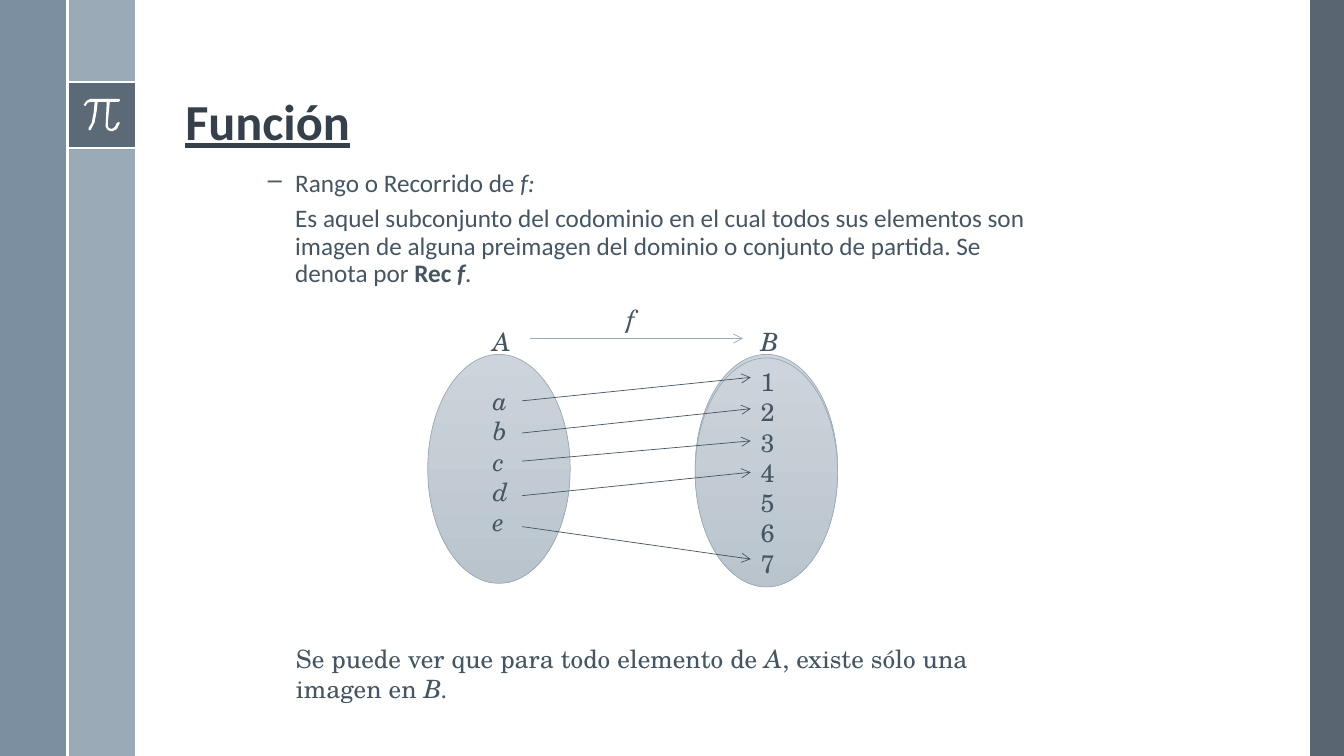
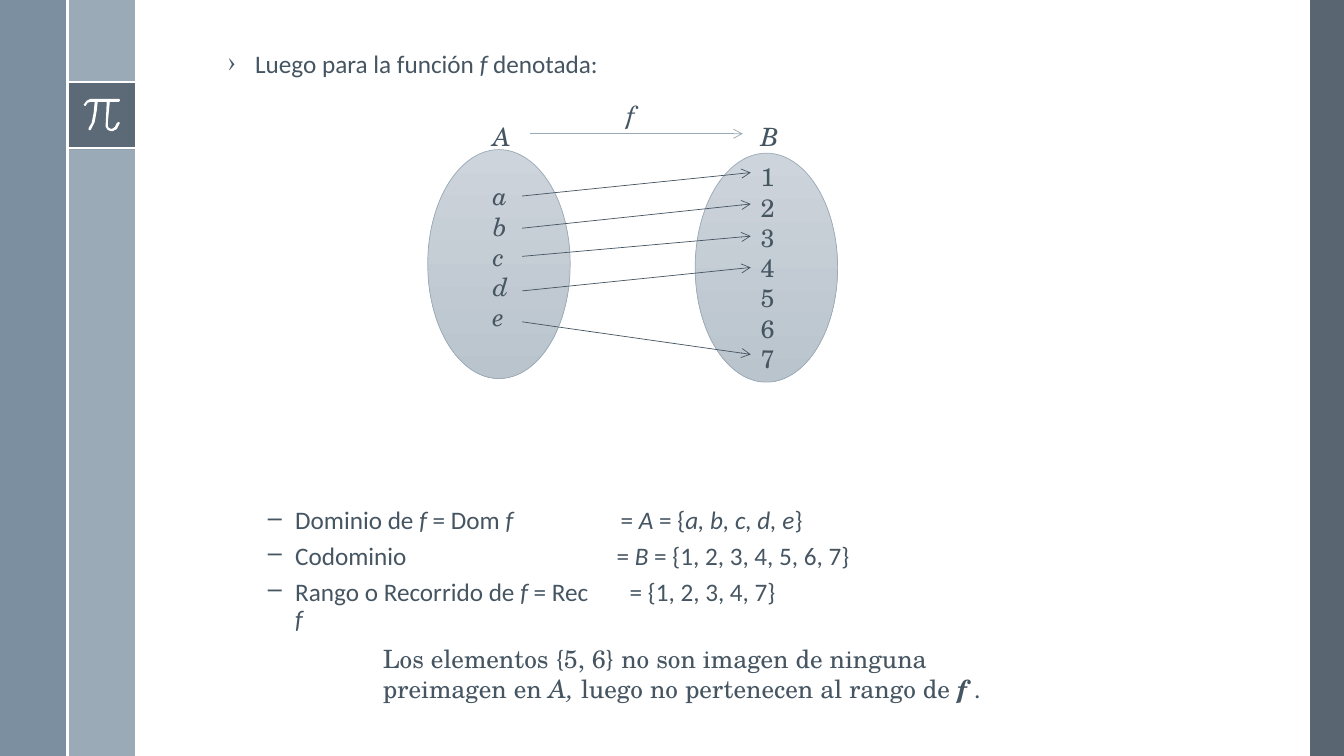
from lxml.etree import SubElement as Sub
from pptx import Presentation
from pptx.dml.color import RGBColor as Rgb
from pptx.enum.shapes import MSO_CONNECTOR as Link, MSO_SHAPE as Form
from pptx.enum.text import MSO_ANCHOR as Anchor
from pptx.oxml.ns import qn
from pptx.util import Cm, Pt

HUES = {
    "text": "465562",
    "title": "35404A",
    "dark": "475562",
    "mid": "6A8093",
    "pale": "9BAAB7",
    "light": "CDD4DB",
    "shade": "BAC4CD",
    "white": "FFFFFF",
}
SANS = {"name": "Calibri", "size": Pt(18)}
SERIF = {"name": "TeX Gyre Schola", "size": Pt(18)}
HEAD = {"name": "Calibri", "size": Pt(36), "bold": True, "underline": True}
STYLES = {
    "": {},
    "i": {"italic": True},
    "b": {"bold": True},
    "bi": {"bold": True, "italic": True},
}
FIRST = {"left": 0.69, "hang": -0.69, "mark": "›"}
SECOND = {"left": 1.7, "hang": -0.69, "mark": "–"}
PLAIN = {"left": 1.7}
DENSE = {"line_spacing": 0.9, "space_before": Pt(6)}
BANDS = [
    (33.02, 0, 0.85, 19.05, "dark", 90),
    (1.7, 0, 1.7, 19.05, "pale", 100),
    (0, 0, 1.7, 19.05, "mid", 88),
    (1.7, 2.06, 1.7, 1.7, "dark", 75),
]
RULES = [(1.7, 2.06, 3.4, 2.06), (1.7, 3.73, 3.4, 3.73), (1.7, 0, 1.7, 19.05)]
PI = [
    (118, 98), (90, 98), (86, 100), (83, 104), (84, 105), (85, 105),
    (87, 102), (90, 101), (94, 101), (93, 112), (91, 122), (88, 127),
    (88, 129), (90, 129), (94, 121), (96, 110), (97, 101), (106, 101),
    (105, 122), (105, 126), (107, 129), (110, 130), (112, 130), (116, 128),
    (119, 122), (118, 121), (116, 122), (114, 126), (111, 128), (108, 127),
    (107, 125), (107, 122), (109, 101), (118, 101), (119, 100), (119, 99),
]
OVAL_B = 17.52
COL_A, COL_B = 12.17, 18.92
PAIRS = [(1.17, 0.58), (1.98, 1.37), (2.69, 2.18), (3.56, 2.97), (4.34, 5.16)]


def hue(key):
    return Rgb.from_string(HUES[key])


def fmt(item, vals):
    for key, val in vals.items():
        setattr(item, key, val)


def band(slide, x, y, w, h, tone, alpha):
    box = slide.shapes.add_shape(Form.RECTANGLE, Cm(x), Cm(y), Cm(w), Cm(h))
    box.shadow.inherit = False
    box.fill.solid()
    box.fill.fore_color.rgb = hue(tone)
    box.line.fill.background()
    if alpha < 100:
        paint = box.element.spPr.find(qn("a:solidFill"))[0]
        Sub(paint, qn("a:alpha"), val=str(alpha * 1000))


def line(slide, ends, tone, width=0.5, arrow=True):
    link = slide.shapes.add_connector(Link.STRAIGHT, *map(Cm, ends))
    link.line.color.rgb = hue(tone)
    link.line.width = Pt(width)
    props = link.element.spPr
    if arrow:
        Sub(props.find(qn("a:ln")), qn("a:tailEnd"), type="arrow")
    Sub(props, qn("a:effectLst"))


def sign(slide):
    pen = slide.shapes.build_freeform(*PI[0], scale=Cm(0.0254))
    pen.add_line_segments(PI[1:], close=True)
    glyph = pen.convert_to_shape()
    glyph.shadow.inherit = False
    glyph.fill.solid()
    glyph.fill.fore_color.rgb = hue("white")
    glyph.line.fill.background()


def oval(slide, x, y):
    ring = slide.shapes.add_shape(Form.OVAL, Cm(x), Cm(y), Cm(3.59), Cm(5.77))
    ring.shadow.inherit = False
    ring.fill.gradient()
    ring.fill.gradient_angle = 270
    for stop, tone in zip(ring.fill.gradient_stops, ("light", "shade")):
        stop.color.rgb = hue(tone)
    ring.line.color.rgb = hue("pale")
    ring.line.width = Pt(0.5)


def indent(para, left=0, hang=0, mark=None):
    props = para._p.get_or_add_pPr()
    props.set("marL", str(Cm(left)))
    props.set("indent", str(Cm(hang)))
    if mark:
        Sub(props, qn("a:buChar"), char=mark)


def text(slide, area, paras, font, tone="text", dents=(), space=None, anchor=Anchor.TOP):
    frame = slide.shapes.add_textbox(*map(Cm, area)).text_frame
    frame.word_wrap = True
    frame.vertical_anchor = anchor
    for num, parts in enumerate(paras):
        para = frame.add_paragraph() if num else frame.paragraphs[0]
        fmt(para, space or {})
        if dents:
            indent(para, **dents[num])
        for words, style in parts:
            run = para.add_run()
            run.text = words
            fmt(run.font, font | STYLES[style])
            run.font.color.rgb = hue(tone)


def column(slide, x, y, items, style="i"):
    area = (x, y, 1, 0.25 + 0.77 * len(items))
    text(slide, area, [[(item, style)] for item in items], SERIF)


def graph(slide, top):
    oval(slide, 10.78, top)
    column(slide, COL_A, top + 0.66, "abcde")
    oval(slide, OVAL_B, top + 0.09)
    column(slide, COL_B, top + 0.18, "1234567", "")
    for start, end in PAIRS:
        line(slide, (13.16, top + start, 18.92, top + end), "text")
    column(slide, COL_A, top - 0.84, "A")
    column(slide, COL_B, top - 0.84, "B")
    line(slide, (13.36, top - 0.4, 18.72, top - 0.4), "pale")
    column(slide, 15.54, top - 1.4, "f")


def base(deck):
    slide = deck.slides.add_slide(deck.slide_layouts[6])
    for spec in BANDS:
        band(slide, *spec)
    for ends in RULES:
        line(slide, ends, "white", 1.5, False)
    sign(slide)
    return slide


def range_slide(deck):
    slide = base(deck)
    text(slide, (4.42, 0.48, 27.18, 3.45), [[("Función", "")]], HEAD, "title",
         space={"line_spacing": 0.9}, anchor=Anchor.BOTTOM)
    text(slide, (5.49, 4.17, 20.75, 3.3), [
        [("Rango o Recorrido de ", ""), ("f:", "i")],
        [("Es aquel subconjunto del codominio en el cual todos sus elementos son "
          "imagen de alguna preimagen del dominio o conjunto de partida. "
          "Se denota por ", ""), ("Rec ", "b"), ("f", "bi"), (".", "")],
    ], SANS, dents=(SECOND, PLAIN), space=DENSE)
    oval(slide, OVAL_B, 8.93)
    graph(slide, 8.93)
    text(slide, (7.21, 16.08, 18.26, 1.8), [
        [("Se puede ver que para todo elemento de ", ""), ("A", "i"),
         (", existe sólo una imagen en ", ""), ("B.", "i")],
    ], SERIF)


def sets_slide(deck):
    slide = base(deck)
    text(slide, (5.49, 1.19, 20.75, 1.1), [
        [("Luego para la función ", ""), ("f", "i"), (" denotada:", "")],
    ], SANS, dents=[FIRST], space=DENSE)
    graph(slide, 3.77)
    text(slide, (5.49, 12.68, 9.8, 2.9), [
        [("Dominio de ", ""), ("f", "i"), (" = Dom ", ""), ("f", "i")],
        [("Codominio", "")],
        [("Rango o Recorrido de ", ""), ("f", "i"), (" = Rec ", ""), ("f", "i")],
    ], SANS, dents=[SECOND] * 3, space=DENSE)
    text(slide, (15.29, 12.68, 8, 2.9), [
        [("= ", ""), ("A", "i"), (" = {", ""), ("a, b, c, d, e", "i"), ("}", "")],
        [("= ", ""), ("B", "i"), (" = {1, 2, 3, 4, 5, 6, 7}", "")],
        [("= {1, 2, 3, 4, 7}", "")],
    ], SANS, dents=[{"left": 0.1}, {"left": 0}, {"left": 0.33}], space=DENSE)
    text(slide, (9.4, 16.08, 16.87, 1.8), [
        [("Los elementos {5, 6} no son imagen de ninguna preimagen en ", ""),
         ("A, ", "i"), ("luego no pertenecen al rango de ", ""),
         ("f", "bi"), (" .", "")],
    ], SERIF)


def main():
    deck = Presentation()
    fmt(deck, {"slide_width": Cm(33.87), "slide_height": Cm(19.05)})
    range_slide(deck)
    sets_slide(deck)
    deck.save("out.pptx")


if __name__ == "__main__":
    main()
